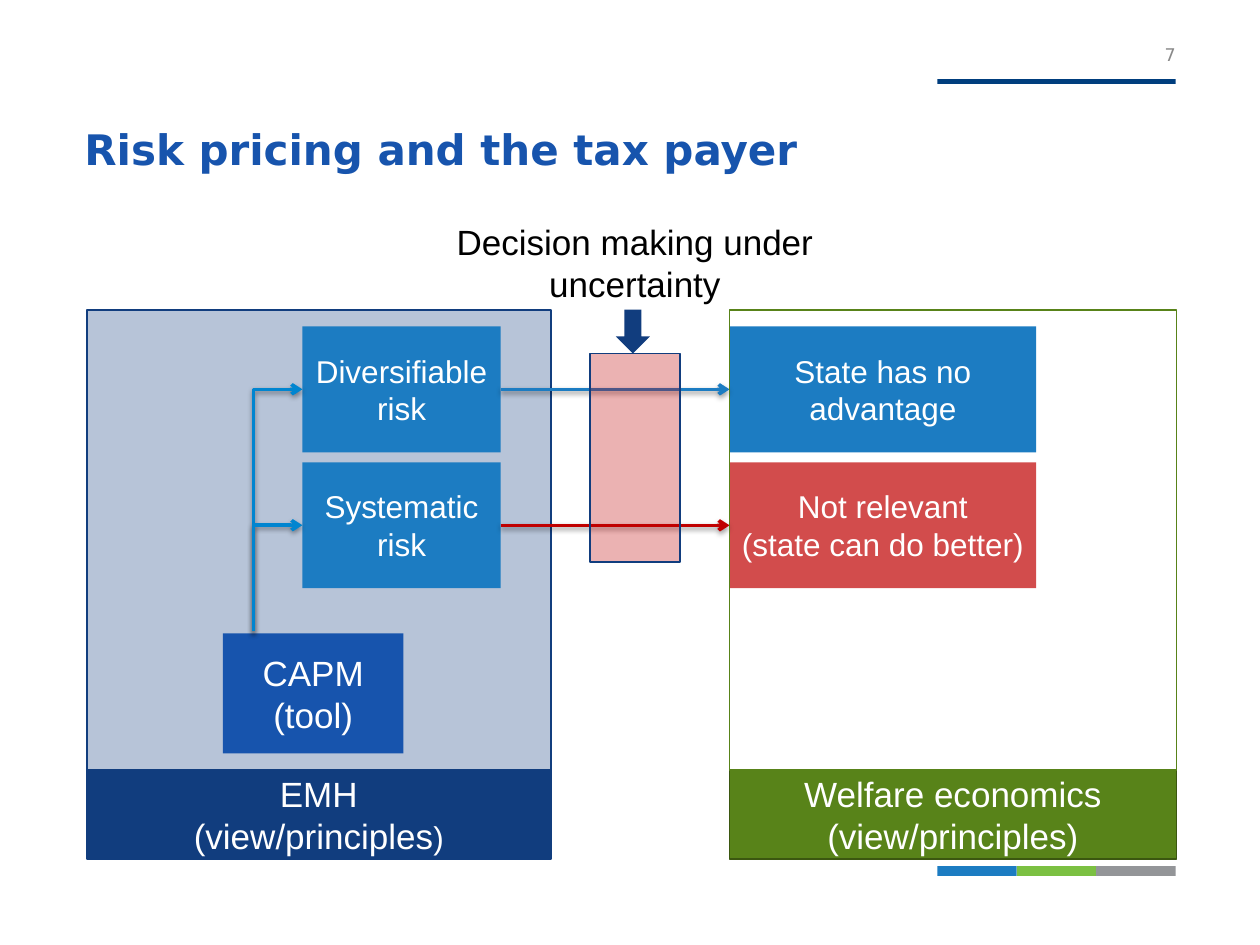
"""Build the slide on risk pricing and the tax payer."""
import pptx
import pptx.util
import pptx.dml.color
import pptx.enum.shapes
import pptx.enum.text
import pptx.oxml
import pptx.oxml.ns

Pt = pptx.util.Pt
SHAPE = pptx.enum.shapes.MSO_SHAPE
CONNECTOR = pptx.enum.shapes.MSO_CONNECTOR
ALIGN = pptx.enum.text.PP_ALIGN
ANCHOR = pptx.enum.text.MSO_ANCHOR
NS = pptx.oxml.ns.nsdecls("a")

C = {
    "rule": "003E7E", "blue": "1C7CC2", "lime": "7BC042", "grey": "939598",
    "navy": "113D7E", "royal": "1754AD", "sky": "0085D0", "green": "588319",
    "moss": "3B5710", "red": "C00000", "white": "FFFFFF", "black": "000000",
    "number": "898989",
}

TITLE = "Risk pricing and the tax payer"
NUMBER = "7"
HEADING = "Decision making under uncertainty"
EMH = [("EMH\v(view/principles", 20), (")", 18)]
WELFARE = [("Welfare economics\v(view/principles)", 20)]
CAPM = [("CAPM\v(tool)", 20)]
ROWS = [
    (186.5, "Diversifiable risk", "State has no advantage", "blue", 100, "blue", 7.2),
    (264.2, "Systematic risk", "Not relevant\v(state can do better)", "red", 70, "red", 2.9),
]
STRIPES = ["blue", "lime", "grey"]

LEFT, LEFT_W = 49.7, 265
RIGHT, RIGHT_W = 416.9, 255.4
PANEL_TOP, LABEL_TOP, LABEL_H = 177.1, 439.9, 51.1
RISK_X, RISK_W, ROW_H = 172.8, 113.3, 72
VIEW_W = 175.3
STEM_X, STEM_Y = 144.7, 360.7
RULE_X, RULE_W = 535.7, 136.1


def rgb(name):
    return pptx.dml.color.RGBColor.from_string(C[name])


def write(tf, runs, color, font="Arial", align=ALIGN.CENTER, anchor=ANCHOR.MIDDLE,
          insets=(7.2, 3.6, 7.2, 3.6), bold=False):
    tf.word_wrap = True
    tf.vertical_anchor = anchor
    tf.margin_left, tf.margin_top, tf.margin_right, tf.margin_bottom = map(Pt, insets)
    p = tf.paragraphs[0]
    p.alignment = align
    for i, (text, size) in enumerate(runs):
        done = len(p.runs)
        if i == 0:
            p.text = text
        else:
            p.add_run().text = text
        for r in p.runs[done:]:
            r.font.name, r.font.size, r.font.bold = font, Pt(size), bold
            r.font.color.rgb = rgb(color)


def box(s, at, fill=None, line=None, alpha=100, runs=None, side=7.2, kind=SHAPE.RECTANGLE):
    sp = s.shapes.add_shape(kind, *map(Pt, at))
    sp.shadow.inherit = False
    if fill:
        sp.fill.solid()
        sp.fill.fore_color.rgb = rgb(fill)
        if alpha < 100:
            color = sp.fill._xPr.find(".//" + pptx.oxml.ns.qn("a:srgbClr"))
            color.append(pptx.oxml.parse_xml(f'<a:alpha {NS} val="{alpha * 1000}"/>'))
    else:
        sp.fill.background()
    if line:
        sp.line.color.rgb = rgb(line)
        sp.line.width = Pt(1)
    else:
        sp.line.fill.background()
    if runs:
        write(sp.text_frame, runs, "white", insets=(side, 3.6, side, 3.6))


def arrow(s, kind, start, end, color):
    cx = s.shapes.add_connector(kind, *map(Pt, start + end))
    cx.line.color.rgb = rgb(color)
    cx.line.width = Pt(2)
    cx.line._get_or_add_ln().append(pptx.oxml.parse_xml(f'<a:tailEnd {NS} type="arrow"/>'))
    cx._element.spPr.append(pptx.oxml.parse_xml(
        f'<a:effectLst {NS}><a:outerShdw blurRad="{Pt(3.1)}" dist="{Pt(1.6)}" dir="5400000" '
        f'rotWithShape="0"><a:srgbClr val="{C["black"]}"><a:alpha val="38000"/></a:srgbClr>'
        '</a:outerShdw></a:effectLst>'))
    return cx


def bent_arrow(s, x1, y1, x2, y2, color):
    mid_x, mid_y = (x1 + x2) / 2, (y1 + y2) / 2
    dx, dy = abs(y2 - y1) / 2, abs(x2 - x1) / 2
    cx = arrow(s, CONNECTOR.ELBOW, (mid_x + dx, mid_y + dy), (mid_x - dx, mid_y - dy), color)
    spPr = cx._element.spPr
    spPr.find(pptx.oxml.ns.qn("a:xfrm")).set("rot", "5400000")
    spPr.find(pptx.oxml.ns.qn("a:prstGeom")).set("prst", "bentConnector2")


def text_box(s, at, runs, color, **style):
    tb = s.shapes.add_textbox(*map(Pt, at))
    write(tb.text_frame, runs, color, **style)


def main():
    prs = pptx.Presentation()
    prs.slide_width, prs.slide_height = Pt(720), Pt(540)
    s = prs.slides.add_slide(prs.slide_layouts[5])

    title = s.shapes.title
    title.left, title.top, title.width, title.height = map(Pt, (48.2, 31.7, 640.8, 73.4))
    write(title.text_frame, [(TITLE, 24)], "royal", font="DejaVu Sans", align=ALIGN.LEFT,
          anchor=ANCHOR.BOTTOM, insets=(0, 0, 0, 5.8), bold=True)

    box(s, (RULE_X, 45.2, RULE_W, 2.8), "rule")
    stripe_w = RULE_W / len(STRIPES)
    for i, color in enumerate(STRIPES):
        box(s, (RULE_X + i * stripe_w, 495, stripe_w, 5.6), color)
    text_box(s, (636.5, 8.6, 35.3, 28.8), [(NUMBER, 10)], "number", font="DejaVu Sans",
             align=ALIGN.RIGHT, anchor=ANCHOR.BOTTOM, insets=(0, 0, 0, 0))

    box(s, (LEFT, PANEL_TOP, LEFT_W, 268.6), "navy", "navy", 30)
    box(s, (LEFT, LABEL_TOP, LEFT_W, LABEL_H), "navy", "navy", runs=EMH)
    box(s, (RIGHT, LABEL_TOP, RIGHT_W, LABEL_H), "green", "moss", runs=WELFARE)
    box(s, (127.4, 362, 103.2, 68.6), "royal", runs=CAPM)

    for top, risk, view, fill, alpha, line, side in ROWS:
        mid = top + ROW_H / 2
        box(s, (RISK_X, top, RISK_W, ROW_H), "blue", runs=[(risk, 18)])
        bent_arrow(s, STEM_X, STEM_Y, RISK_X, mid, "sky")
        box(s, (RIGHT, top, VIEW_W, ROW_H), fill, alpha=alpha, runs=[(view, 18)], side=side)
        arrow(s, CONNECTOR.STRAIGHT, (RISK_X + RISK_W, mid), (RIGHT, mid), line)

    box(s, (337.3, 202, 51.1, 119), "red", "navy", 30)
    text_box(s, (235.4, 122.4, 254.9, 55.4), [(HEADING, 20)], "black", anchor=ANCHOR.TOP)
    box(s, (352, 177, 19.4, 25), "navy", kind=SHAPE.DOWN_ARROW)
    box(s, (RIGHT, PANEL_TOP, RIGHT_W, LABEL_TOP - PANEL_TOP), line="green")
    prs.save("out.pptx")


if __name__ == "__main__":
    main()
